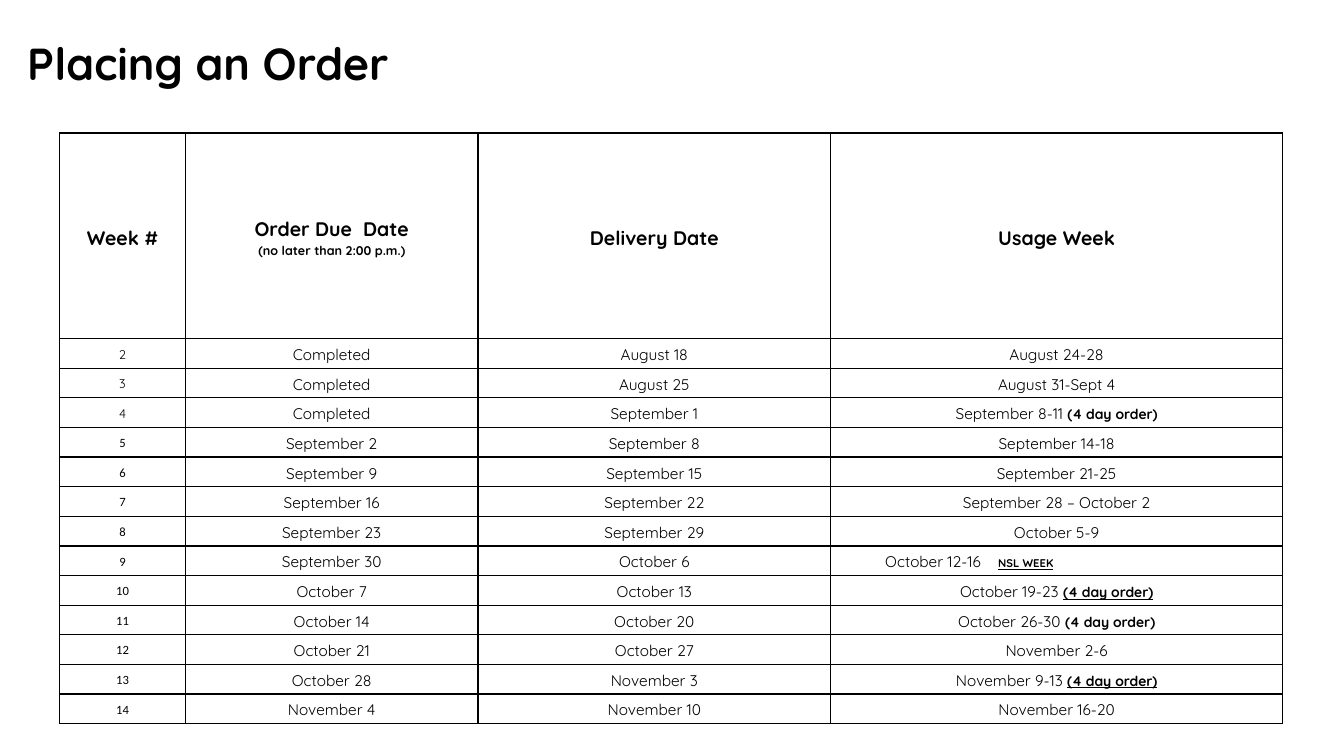
import dataclasses

import pptx
import pptx.dml.color
import pptx.enum.text
import pptx.oxml
import pptx.oxml.ns
import pptx.util

Inches = pptx.util.Inches
Align = pptx.enum.text.PP_ALIGN
Anchor = pptx.enum.text.MSO_ANCHOR


@dataclasses.dataclass(frozen=True)
class Theme:
    """Colours, fonts and type sizes of the slide."""

    ink: str = "000000"
    paper: str = "FFFFFF"
    font: str = "Quicksand"
    number_font: str = "Calibri"
    title: int = 32
    heading: int = 14
    date: int = 11
    note: int = 10
    small: int = 9
    tag: int = 8


THEME = Theme()
COLUMN_WIDTHS = (1.25, 2.9, 3.5, 4.48)
HEADER_HEIGHT = 2.04
CELL_INSET = 0.07
TAG_INDENT = 0.54
TAG_STOP = 1.12

HEADING = {"size": THEME.heading, "bold": True}
DATE = {"size": THEME.date}
NOTE = {"size": THEME.note, "bold": True}
UNDERLINED_NOTE = {**NOTE, "underline": True}
TAG = {"size": THEME.tag, "bold": True, "underline": True}
FOUR_DAYS = "(4 day order)"

HEADINGS = (
    [("Week #", HEADING)],
    [("Order Due  Date", HEADING)],
    [("Delivery Date", HEADING)],
    [("Usage Week", HEADING)],
)
DEADLINE = [("(no later than 2:00 p.m.)", {"size": THEME.small, "bold": True})]
FIRST_WEEK = 2
LAST_COMPLETED_WEEK = 4
SCHEDULE = (
    ("Completed", "August 18", "August 24-28"),
    ("Completed", "August 25", "August 31-Sept 4"),
    ("Completed", "September 1", "September 8-11 "),
    ("September 2", "September 8", "September 14-18"),
    ("September 9", "September 15", "September 21-25"),
    ("September 16", "September 22", "September 28 – October 2"),
    ("September 23", "September 29", "October 5-9"),
    ("September 30", "October 6", "October 12-16\t"),
    ("October 7", "October 13", "October 19-23 "),
    ("October 14", "October 20", "October 26-30 "),
    ("October 21", "October 27", "November 2-6"),
    ("October 28", "November 3", "November 9-13 "),
    ("November 4", "November 10", "November 16-20"),
)
USAGE_NOTES = {
    4: (FOUR_DAYS, NOTE),
    9: ("NSL WEEK", TAG),
    10: (FOUR_DAYS, UNDERLINED_NOTE),
    11: (FOUR_DAYS, NOTE),
    13: (FOUR_DAYS, UNDERLINED_NOTE),
}


def add_spans(para, spans):
    """Write formatted spans of text into a paragraph."""
    for text, changes in spans:
        span = para.add_run()
        span.text = text
        look = {"name": THEME.font, "bold": False, **changes}
        look["size"] = pptx.util.Pt(look["size"])
        for name, value in look.items():
            setattr(span.font, name, value)
        span.font.color.rgb = pptx.dml.color.RGBColor.from_string(THEME.ink)


def add_borders(cell):
    """Draw a one-point line on every side of a cell."""
    properties = cell._tc.get_or_add_tcPr()
    namespace = pptx.oxml.ns.nsdecls("a")
    for position, side in enumerate(("lnL", "lnR", "lnT", "lnB")):
        line = pptx.oxml.parse_xml(
            f'<a:{side} {namespace} w="12700"><a:solidFill>'
            f'<a:srgbClr val="{THEME.ink}"/></a:solidFill></a:{side}>'
        )
        properties.insert(position, line)


def fill_cell(cell, *lines):
    """Format a cell and write one centred paragraph for each line."""
    layout = {
        "margin_left": Inches(CELL_INSET),
        "margin_right": Inches(CELL_INSET),
        "margin_top": 0,
        "margin_bottom": 0,
        "vertical_anchor": Anchor.MIDDLE,
    }
    for name, value in layout.items():
        setattr(cell, name, value)
    cell.fill.solid()
    cell.fill.fore_color.rgb = pptx.dml.color.RGBColor.from_string(THEME.paper)
    add_borders(cell)
    for index, spans in enumerate(lines):
        frame = cell.text_frame
        para = frame.add_paragraph() if index else frame.paragraphs[0]
        para.alignment = Align.CENTER
        para.line_spacing = 1.15
        add_spans(para, spans)


def indent_tagged_week(cell):
    """Set a usage week to the left, with its tag at a tab stop."""
    cell.margin_left = Inches(TAG_INDENT)
    para = cell.text_frame.paragraphs[0]
    para.alignment = Align.LEFT
    stops = pptx.oxml.parse_xml(
        f'<a:tabLst {pptx.oxml.ns.nsdecls("a")}>'
        f'<a:tab pos="{Inches(TAG_STOP)}" algn="l"/></a:tabLst>'
    )
    para._p.get_or_add_pPr().append(stops)


def add_title(page, left, top, width, height):
    """Place the slide title in the given box."""
    title = page.shapes.title
    box = {"left": left, "top": top, "width": width, "height": height}
    for name, value in box.items():
        setattr(title, name, Inches(value))
    frame = title.text_frame
    frame.word_wrap = True
    frame.auto_size = pptx.enum.text.MSO_AUTO_SIZE.NONE
    frame.vertical_anchor = Anchor.TOP
    para = frame.paragraphs[0]
    para.alignment = Align.LEFT
    para.line_spacing = 0.9
    add_spans(para, [("Placing an Order", {"size": THEME.title, "bold": True})])


def add_schedule(page, left, top, width, height):
    """Place the order schedule table in the given box."""
    box = [Inches(value) for value in (left, top, width, height)]
    table = page.shapes.add_table(len(SCHEDULE) + 1, len(COLUMN_WIDTHS), *box).table
    table.horz_banding = False
    for column, column_width in zip(table.columns, COLUMN_WIDTHS):
        column.width = Inches(column_width)
    for row in table.rows:
        row.height = Inches((height - HEADER_HEIGHT) / len(SCHEDULE))
    table.rows[0].height = Inches(HEADER_HEIGHT)

    for index, heading in enumerate(HEADINGS):
        lines = [heading, DEADLINE] if index == 1 else [heading]
        fill_cell(table.cell(0, index), *lines)

    for row_index, dates in enumerate(SCHEDULE, start=1):
        week = FIRST_WEEK + row_index - 1
        font = THEME.font if week <= LAST_COMPLETED_WEEK else THEME.number_font
        number = (str(week), {"size": THEME.small, "name": font})
        fill_cell(table.cell(row_index, 0), [number])
        for column_index, date in enumerate(dates, start=1):
            spans = [(date, DATE)]
            if column_index == len(dates) and week in USAGE_NOTES:
                spans.append(USAGE_NOTES[week])
            cell = table.cell(row_index, column_index)
            fill_cell(cell, spans)
            if "\t" in date:
                indent_tagged_week(cell)


def main():
    """Build and save the one-slide deck."""
    deck = pptx.Presentation()
    deck.slide_width = Inches(13.33)
    deck.slide_height = Inches(7.5)
    page = deck.slides.add_slide(deck.slide_layouts[0])
    subtitle = page.placeholders[1].element
    subtitle.getparent().remove(subtitle)
    add_title(page, 0.17, 0.36, 6.2, 0.79)
    add_schedule(page, 0.59, 1.32, sum(COLUMN_WIDTHS), 5.86)
    deck.save("out.pptx")


if __name__ == "__main__":
    main()
